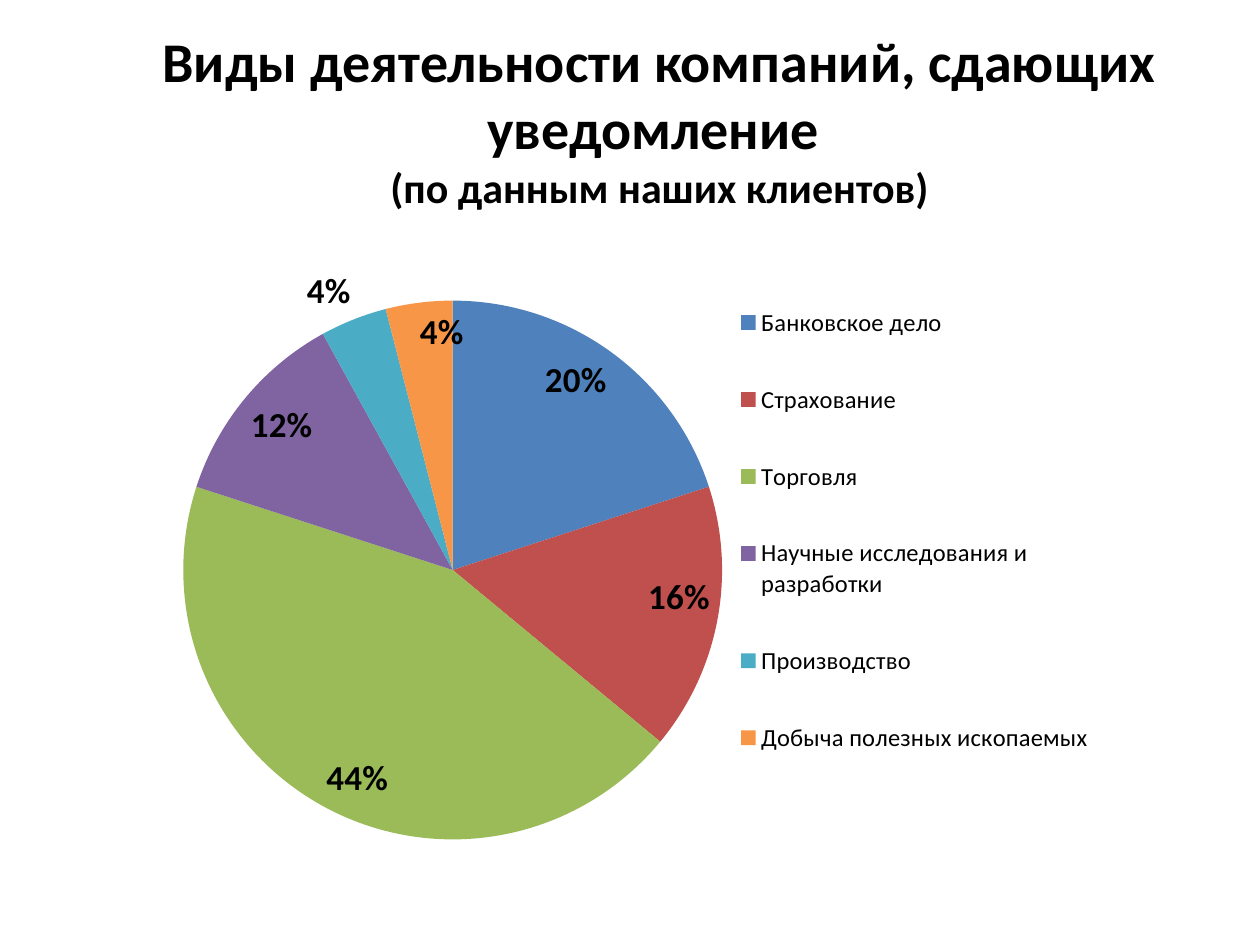
from lxml.etree import SubElement
from pptx import Presentation
from pptx.chart.data import CategoryChartData
from pptx.dml.color import RGBColor
from pptx.enum.chart import XL_CHART_TYPE, XL_LABEL_POSITION, XL_LEGEND_POSITION
from pptx.enum.text import MSO_ANCHOR, PP_ALIGN
from pptx.oxml.ns import qn
from pptx.util import Inches, Pt

FONT = "Calibri"
ACTIVITIES = [
    ("Банковское дело", 0.2, "4F81BD"),
    ("Страхование", 0.16, "C0504D"),
    ("Торговля", 0.44, "9BBB59"),
    ("Научные исследования и разработки", 0.12, "8064A2"),
    ("Производство", 0.04, "4BACC6"),
    ("Добыча полезных ископаемых", 0.04, "F79646"),
]
OUTSIDE_LABEL = "Производство"


def color(value):
    return RGBColor.from_string(value)


def format_font(font, size, bold=False, fill="000000"):
    font.name = FONT
    font.size = Pt(size)
    font.bold = bold
    font.color.rgb = color(fill)


def add_text(paragraph, text, **style):
    run = paragraph.add_run()
    run.text = text
    format_font(run.font, **style)


def set_layout(parent, position, inner=False, **fractions):
    for previous in parent.findall(qn("c:layout")):
        parent.remove(previous)
    layout = SubElement(parent, qn("c:layout"))
    manual = SubElement(layout, qn("c:manualLayout"))
    if inner:
        SubElement(manual, qn("c:layoutTarget")).set("val", "inner")
    for mode in ("xMode", "yMode"):
        SubElement(manual, qn(f"c:{mode}")).set("val", "edge")
    for name, fraction in fractions.items():
        SubElement(manual, qn(f"c:{name}")).set("val", str(fraction))
    parent.insert(position, layout)


def place_title(slide, left, top, width, height):
    heading = slide.shapes.title
    heading.left, heading.top = Inches(left), Inches(top)
    heading.width, heading.height = Inches(width), Inches(height)
    frame = heading.text_frame
    frame.word_wrap = True
    frame.vertical_anchor = MSO_ANCHOR.MIDDLE
    paragraph = frame.paragraphs[0]
    paragraph.alignment = PP_ALIGN.CENTER
    add_text(paragraph, "Виды деятельности компаний, сдающих уведомление ", size=32, bold=True)
    paragraph.add_line_break()
    add_text(paragraph, "(по данным наших клиентов)", size=24, bold=True)


def format_slices(plot):
    plot.vary_by_categories = True
    plot.has_data_labels = True
    labels = plot.data_labels
    labels.show_value = True
    labels.show_percentage = False
    labels.number_format = "0%"
    labels.number_format_is_linked = False
    labels.position = XL_LABEL_POSITION.INSIDE_END
    format_font(labels.font, 20, bold=True)
    for index, (activity, _, fill) in enumerate(ACTIVITIES):
        point = plot.series[0].points[index]
        point.format.fill.solid()
        point.format.fill.fore_color.rgb = color(fill)
        label = point.data_label
        format_font(label.font, 20, bold=True)
        label.position = (
            XL_LABEL_POSITION.OUTSIDE_END
            if activity == OUTSIDE_LABEL
            else XL_LABEL_POSITION.INSIDE_END
        )


def place_activity_chart(slide, left, top, width, height):
    shares = CategoryChartData(number_format="0%")
    shares.categories = [activity for activity, _, _ in ACTIVITIES]
    shares.add_series("Series 1", [share for _, share, _ in ACTIVITIES])
    chart = slide.shapes.add_chart(
        XL_CHART_TYPE.PIE, Inches(left), Inches(top), Inches(width), Inches(height), shares
    ).chart
    chart.has_title = False
    format_font(chart.font, 10)
    format_slices(chart.plots[0])
    chart.has_legend = True
    legend = chart.legend
    legend.position = XL_LEGEND_POSITION.RIGHT
    legend.include_in_layout = False
    format_font(legend.font, 14)
    plot_area = chart.element.find(f".//{qn('c:plotArea')}")
    set_layout(plot_area, 0, inner=True, x=0.06, y=0.13, w=0.55, h=0.81)
    legend_area = chart.element.find(f".//{qn('c:legend')}")
    set_layout(legend_area, 1, x=0.62, y=0.07, w=0.37, h=0.81)


def main():
    deck = Presentation()
    deck.slide_width, deck.slide_height = Inches(10), Inches(7.5)
    slide = deck.slides.add_slide(deck.slide_layouts[5])
    slide.background.fill.solid()
    slide.background.fill.fore_color.rgb = color("FFFFFF")
    place_title(slide, 1.14, 0.29, 8.19, 1.31)
    place_activity_chart(slide, 0.98, 1.7, 7.8, 5.28)
    deck.save("out.pptx")


if __name__ == "__main__":
    main()
